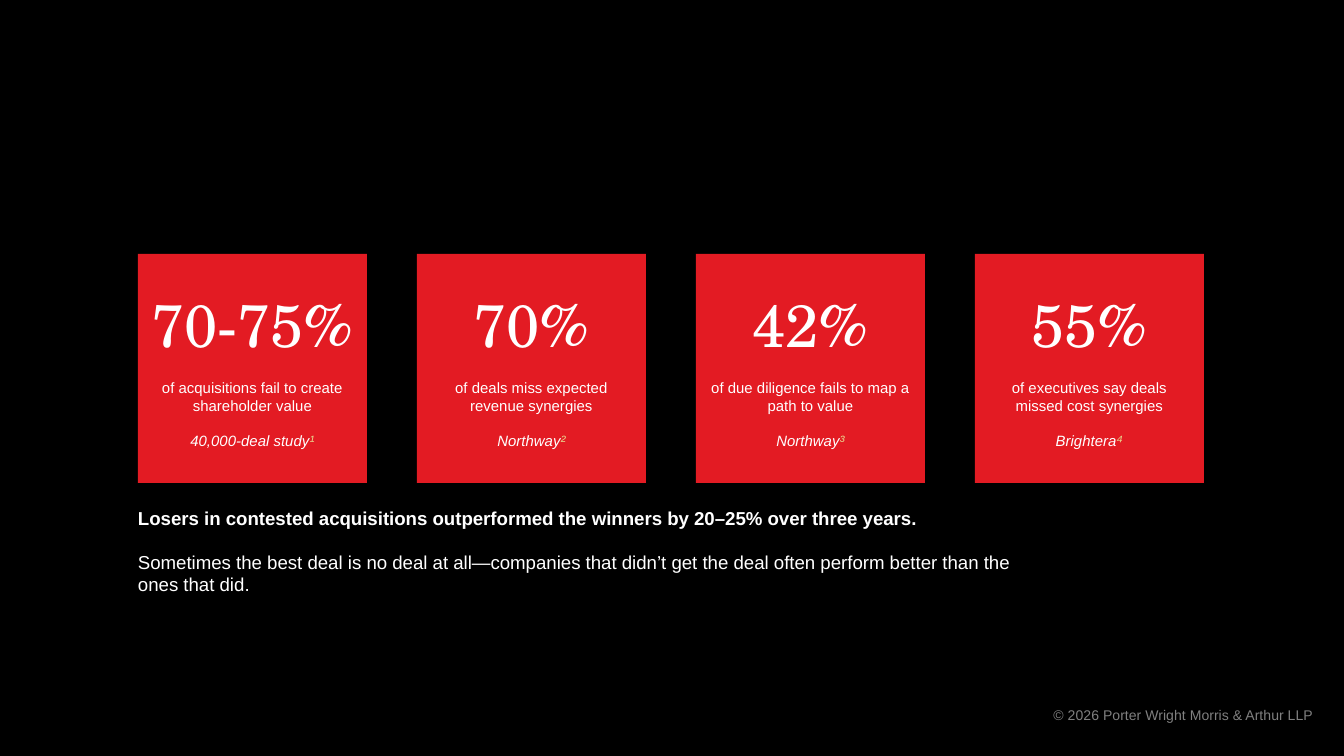
from dataclasses import dataclass

from pptx import Presentation
from pptx.dml.color import RGBColor
from pptx.enum.shapes import MSO_SHAPE
from pptx.enum.text import MSO_ANCHOR, PP_ALIGN
from pptx.util import Emu, Pt

RECTANGLE = MSO_SHAPE.RECTANGLE
TOP, MIDDLE = MSO_ANCHOR.TOP, MSO_ANCHOR.MIDDLE
LEFT, CENTER, RIGHT = PP_ALIGN.LEFT, PP_ALIGN.CENTER, PP_ALIGN.RIGHT

PAGE_WIDTH, PAGE_HEIGHT = 1344, 756
EMU_PER_PX = 9144000 / PAGE_WIDTH

CARD_LEFT, CARD_TOP, CARD_SIZE, CARD_STEP = 138, 254, 229, 279
STATISTICS = [
    ("70-75%", "of acquisitions fail to create shareholder value", "40,000-deal study", "¹"),
    ("70%", "of deals miss expected revenue synergies", "Northway", "²"),
    ("42%", "of due diligence fails to map a path to value", "Northway", "³"),
    ("55%", "of executives say deals missed cost synergies", "Brightera", "⁴"),
]


@dataclass(frozen=True)
class Theme:
    background: str = "000000"
    card: str = "E31B23"
    text: str = "FFFFFF"
    note: str = "E8D48B"
    muted: str = "808080"
    body_font: str = "Arial"
    figure_font: str = "TeX Gyre Schola"
    figure_size: float = 32
    body_size: float = 10
    caption_size: float = 8
    footer_size: float = 7.5


def px(length):
    return Emu(round(length * EMU_PER_PX))


class SlideBuilder:
    def __init__(self, page, theme):
        self.page = page
        self.theme = theme
        page.background.fill.solid()
        page.background.fill.fore_color.rgb = RGBColor.from_string(theme.background)

    def frame(self, shape, anchor):
        frame = shape.text_frame
        frame.word_wrap = True
        frame.vertical_anchor = anchor
        frame.margin_left = frame.margin_right = px(13)
        frame.margin_top = frame.margin_bottom = px(7)
        return frame

    def paragraph(self, frame, align=LEFT, space_before=0):
        """Return the frame's empty first paragraph, or a new one after it."""
        first = frame.paragraphs[0]
        para = frame.add_paragraph() if first.runs else first
        para.alignment = align
        if space_before:
            para.space_before = Pt(space_before)
        return para

    def span(self, para, text, size, color=None, font=None, bold=False, italic=False):
        run = para.add_run()
        run.text = text
        run.font.size = Pt(size)
        run.font.name = font or self.theme.body_font
        run.font.color.rgb = RGBColor.from_string(color or self.theme.text)
        run.font.bold = bold
        run.font.italic = italic

    def text_box(self, left, top, width, height, anchor=TOP):
        box = self.page.shapes.add_textbox(px(left), px(top), px(width), px(height))
        return self.frame(box, anchor)

    def card(self, left, top, size, figure, caption, source, note):
        theme = self.theme
        card = self.page.shapes.add_shape(RECTANGLE, px(left), px(top), px(size), px(size))
        card.shadow.inherit = False
        card.fill.solid()
        card.fill.fore_color.rgb = RGBColor.from_string(theme.card)
        card.line.fill.background()
        frame = self.frame(card, MIDDLE)

        para = self.paragraph(frame, CENTER)
        self.span(para, figure, theme.figure_size, font=theme.figure_font)
        para = self.paragraph(frame, CENTER, space_before=10.35)
        self.span(para, caption, theme.caption_size)
        para = self.paragraph(frame, CENTER, space_before=9.2)
        self.span(para, source, theme.caption_size, italic=True)
        self.span(para, note, theme.caption_size, theme.note, italic=True)

    def takeaway(self, left, top, width, height, headline, detail):
        frame = self.text_box(left, top, width, height)
        para = self.paragraph(frame)
        self.span(para, headline, self.theme.body_size, bold=True)
        para = self.paragraph(frame, space_before=11.5)
        self.span(para, detail, self.theme.body_size)

    def footer(self, left, top, width, height, text):
        frame = self.text_box(left, top, width, height, MIDDLE)
        para = self.paragraph(frame, RIGHT)
        self.span(para, text, self.theme.footer_size, self.theme.muted)


def main():
    deck = Presentation()
    deck.slide_width, deck.slide_height = px(PAGE_WIDTH), px(PAGE_HEIGHT)
    blank_layout = deck.slide_layouts[6]
    builder = SlideBuilder(deck.slides.add_slide(blank_layout), Theme())

    builder.footer(872, 673, 454, 83, "© 2026 Porter Wright Morris & Arthur LLP")
    for index, statistic in enumerate(STATISTICS):
        builder.card(CARD_LEFT + index * CARD_STEP, CARD_TOP, CARD_SIZE, *statistic)
    builder.takeaway(
        125, 500, 909, 70,
        "Losers in contested acquisitions outperformed the winners by 20–25% over three years.",
        "Sometimes the best deal is no deal at all—companies that didn’t get the deal "
        "often perform better than the ones that did.",
    )
    deck.save("out.pptx")


if __name__ == "__main__":
    main()
